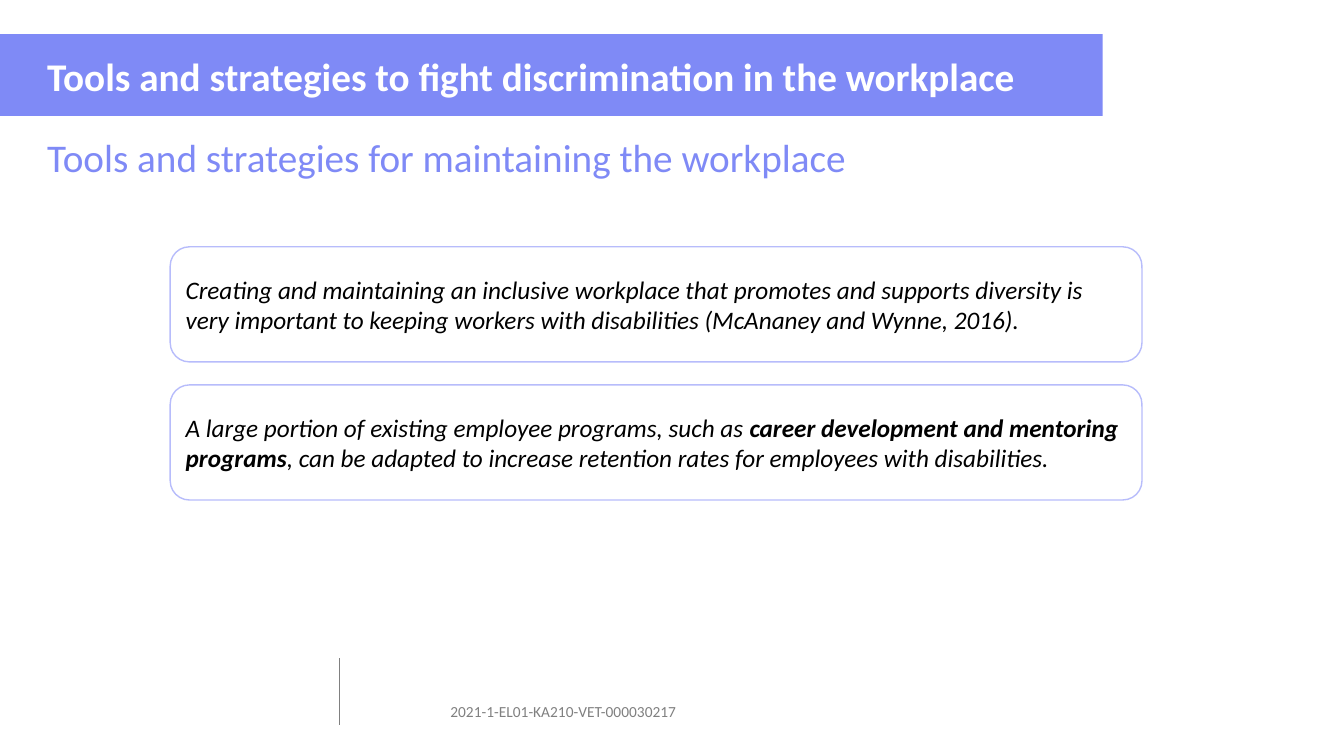
from dataclasses import dataclass

from lxml.etree import SubElement
from pptx import Presentation
from pptx.dml.color import RGBColor
from pptx.enum.shapes import MSO_CONNECTOR, MSO_SHAPE
from pptx.enum.text import MSO_ANCHOR, PP_ALIGN
from pptx.oxml.ns import qn
from pptx.util import Cm, Pt


@dataclass(frozen=True)
class Theme:
    font: str = "Calibri"
    accent: str = "7F8AF6"
    card_line: str = "B7BCFB"
    white: str = "FFFFFF"
    black: str = "000000"
    grey: str = "808080"
    heading_size: float = 28
    card_size: float = 18
    footer_size: float = 11


THEME = Theme()

TITLE = "Tools and strategies to fight discrimination in the workplace"
SUBTITLE = "Tools and strategies for maintaining the workplace"
PROJECT_CODE = "2021-1-EL01-KA210-VET-000030217"
# Each card is a list of (text, bold) runs.
CARDS = [
    [("Creating and maintaining an inclusive workplace that promotes and "
      "supports diversity is very important to keeping workers with "
      "disabilities (McAnaney and Wynne, 2016).", False)],
    [("A large portion of existing employee programs, such as", False),
     (" career development and mentoring programs", True),
     (", can be adapted to increase retention rates for employees with "
      "disabilities.", False)],
]


def rgb(color):
    return RGBColor.from_string(color)


def add_run(p, text, size, color, bold=False, italic=False):
    r = p.add_run()
    r.text = text
    r.font.name = THEME.font
    r.font.size = Pt(size)
    r.font.color.rgb = rgb(color)
    r.font.bold = bold
    r.font.italic = italic


def add_line_of_text(slide, box, text, size, color, bold=False, spacing=1.0):
    tf = slide.shapes.add_textbox(*map(Cm, box)).text_frame
    tf.word_wrap = True
    p = tf.paragraphs[0]
    p.line_spacing = spacing
    add_run(p, text, size, color, bold)


def add_header(slide, left, top, width, height):
    """Coloured band with the title on it and the subtitle below."""
    band = slide.shapes.add_shape(
        MSO_SHAPE.RECTANGLE, Cm(left), Cm(top), Cm(width), Cm(height))
    band.shadow.inherit = False
    band.fill.solid()
    band.fill.fore_color.rgb = rgb(THEME.accent)
    band.line.fill.background()

    indent, text_height = 0.94, 1.14
    add_line_of_text(
        slide, (left + indent, top + 0.46, 31.22, text_height),
        TITLE, THEME.heading_size, THEME.white, bold=True, spacing=0.9)
    add_line_of_text(
        slide, (left + indent, top + height + 0.46, 32.33, text_height),
        SUBTITLE, THEME.heading_size, THEME.accent, spacing=0.9)


def add_cards(slide, left, top, width, height, gap=0.58):
    """Equal outlined cards stacked to fill the given box."""
    card_height = (height - gap * (len(CARDS) - 1)) / len(CARDS)
    for i, runs in enumerate(CARDS):
        card = slide.shapes.add_shape(
            MSO_SHAPE.ROUNDED_RECTANGLE, Cm(left),
            Cm(top + i * (card_height + gap)), Cm(width), Cm(card_height))
        card.shadow.inherit = False
        card.fill.background()
        card.line.color.rgb = rgb(THEME.card_line)
        card.line.width = Pt(1)
        tf = card.text_frame
        tf.word_wrap = True
        tf.vertical_anchor = MSO_ANCHOR.MIDDLE
        p = tf.paragraphs[0]
        p.alignment = PP_ALIGN.LEFT
        for text, bold in runs:
            add_run(p, text, THEME.card_size, THEME.black, bold, italic=True)


def add_footer(slide, left, top, width, height):
    """Vertical divider on the left edge and the project code beside it."""
    divider = slide.shapes.add_connector(
        MSO_CONNECTOR.STRAIGHT, Cm(left), Cm(top), Cm(left), Cm(top + height))
    divider.line.color.rgb = rgb(THEME.grey)
    divider.line.width = Pt(0.75)
    SubElement(divider._element.spPr, qn("a:effectLst"))

    indent = 2.54
    add_line_of_text(
        slide, (left + indent, top + 0.99, width - indent, 0.74),
        PROJECT_CODE, THEME.footer_size, THEME.grey)


def main():
    prs = Presentation()
    prs.slide_width, prs.slide_height = Cm(33.87), Cm(19.05)
    slide = prs.slides.add_slide(prs.slide_layouts[6])
    add_footer(slide, 8.56, 16.59, 11.76, 1.68)
    add_header(slide, 0, 0.86, 27.79, 2.06)
    add_cards(slide, 4.29, 6.22, 24.49, 6.38)
    prs.save("out.pptx")


if __name__ == "__main__":
    main()
